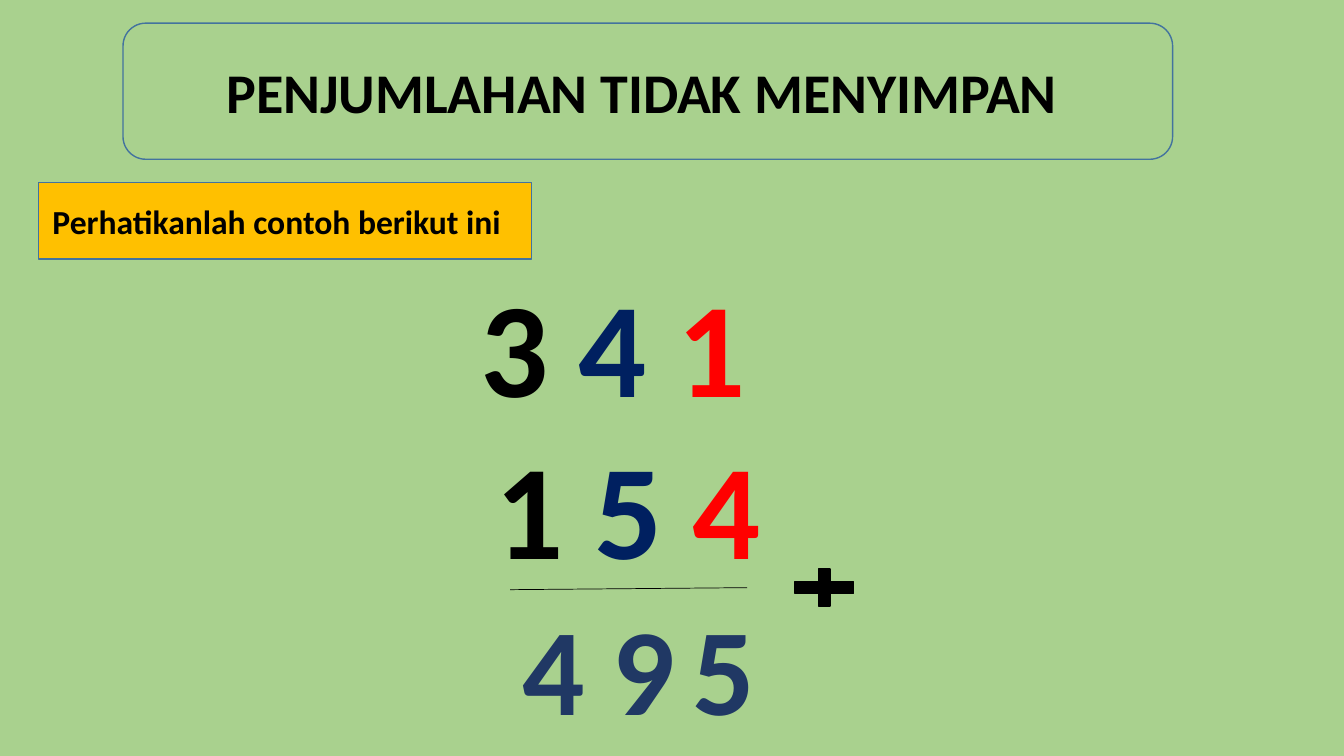
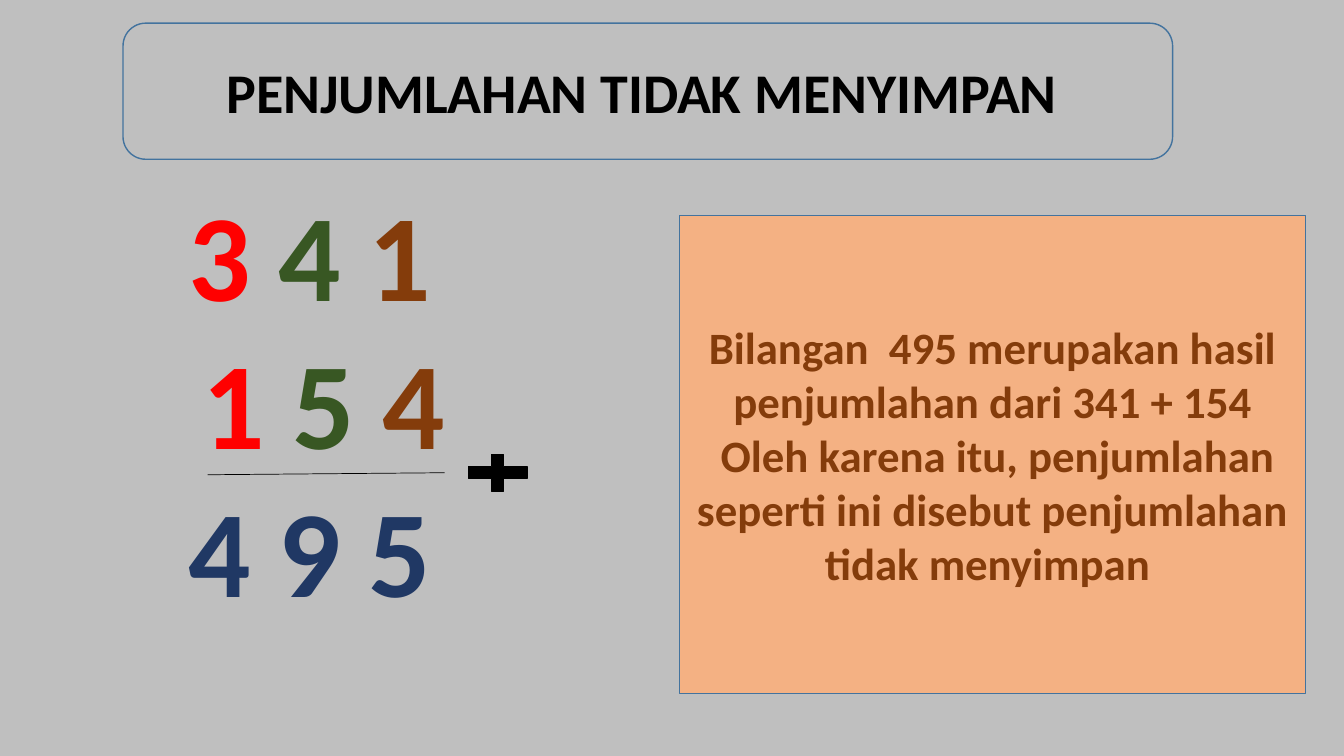
from pptx import Presentation
from pptx.dml.color import RGBColor
from pptx.enum.shapes import MSO_CONNECTOR as LINE, MSO_SHAPE as FORM
from pptx.enum.text import MSO_ANCHOR as ANCHOR, MSO_AUTO_SIZE as AUTO, PP_ALIGN as ALIGN
from pptx.oxml.ns import qn
from pptx.util import Inches, Pt
from lxml import etree

# Shared colours
BLACK, RED, NAVY = "000000", "FF0000", "002060"
BLUE, GREEN, BROWN = "203864", "385723", "843C0B"
EDGE = "43739E"


def draw(slide, form, place, fill=None, edge=None):
    """Add a preset shape without shadow, with optional fill and edge."""
    shape = slide.shapes.add_shape(form, *map(Inches, place))
    shape.shadow.inherit = False
    for part, code in ((shape.fill, fill), (shape.line.fill, edge)):
        if code:
            part.solid()
            part.fore_color.rgb = RGBColor.from_string(code)
        else:
            part.background()
    if edge:
        shape.line.width = Pt(1)
    return shape


def write(shape, rows, size):
    """Fill a shape with centred bold rows of (text, colour) runs."""
    frame = shape.text_frame
    frame.word_wrap = True
    frame.auto_size = AUTO.NONE
    frame.vertical_anchor = ANCHOR.MIDDLE
    for i, row in enumerate(rows):
        para = frame.paragraphs[0] if i == 0 else frame.add_paragraph()
        para.alignment = ALIGN.CENTER
        for text, code in row:
            run = para.add_run()
            run.text = text
            run.font.name = "Calibri"
            run.font.size = Pt(size)
            run.font.bold = True
            run.font.color.rgb = RGBColor.from_string(code)
    return frame


deck = Presentation()
deck.slide_width, deck.slide_height = Inches(13.33), Inches(7.5)

# Sums: digit rows, room left below them, place of the rule and plus sign
sums = [
    {"back": "A9D18E", "box": (-0.33, 2.56, 13.12, 4.94), "size": 96,
     "rows": [[("3 ", BLACK), ("4 ", NAVY), ("1 ", RED)],
              [("1 ", BLACK), ("5 ", NAVY), ("4", RED)]],
     "below": 1.68, "rule": (5.06, 5.85), "plus": (7.78, 5.58)},
    {"back": "BFBFBF", "box": (0.95, 0.79, 4.52, 6.36), "size": 88,
     "rows": [[("3 ", RED), ("4 ", GREEN), ("1 ", BROWN)],
              [("1 ", RED), ("5 ", GREEN), ("4", BROWN)],
              [("4 9 5 ", BLUE)]],
     "below": 0.05, "rule": (2.06, 4.71), "plus": (4.54, 4.44)},
]

# Both slides: background, framed title, sum
slides = []
for item in sums:
    slide = deck.slides.add_slide(deck.slide_layouts[5])
    slides.append(slide)
    slide.background.fill.solid()
    slide.background.fill.fore_color.rgb = RGBColor.from_string(item["back"])

    draw(slide, FORM.ROUNDED_RECTANGLE, (1.22, 0.23, 10.41, 1.35), edge=EDGE)
    title = slide.shapes.title
    title.left, title.top, title.width, title.height = map(
        Inches, (1.16, 0.23, 10.41, 1.35))
    write(title, [[("PENJUMLAHAN TIDAK MENYIMPAN", BLACK)]], 40)

    box = draw(slide, FORM.ROUNDED_RECTANGLE, item["box"])
    text = write(box, item["rows"], item["size"])
    text.margin_bottom = Inches(item["below"])

    x, y = item["rule"]
    rule = slide.shapes.add_connector(
        LINE.STRAIGHT, *map(Inches, (x, y, x + 2.35, y - 0.02)))
    rule.line.color.rgb = RGBColor.from_string(BLACK)
    rule.line.width = Pt(0.5)
    etree.SubElement(rule.element.spPr, qn("a:effectLst"))

    draw(slide, FORM.MATH_PLUS, (*item["plus"], 0.79, 0.5), BLACK, BLACK)

# Slide 1: answer digits
for digit, x, corner in (("5", 6.73, 0.17), ("9", 5.93, 0.17), ("4", 5.06, 0)):
    box = draw(slides[0], FORM.ROUNDED_RECTANGLE, (x, 5.94, 0.86, 1.33))
    box.adjustments[0] = corner
    write(box, [[(digit, BLUE)]], 88)

# Filled panels: the prompt on slide 1, the conclusion on slide 2
panels = [
    (slides[0], (0.38, 1.81, 4.89, 0.76), "FFC000", BLACK, 24, 0.26,
     ["Perhatikanlah contoh berikut ini"]),
    (slides[1], (6.74, 2.14, 6.21, 4.74), "F4B183", BROWN, 32, 0.1,
     ["Bilangan  495 merupakan hasil penjumlahan dari 341 + 154",
      " Oleh karena itu, penjumlahan seperti ini disebut "
      "penjumlahan tidak menyimpan "]),
]
for slide, place, fill, ink, size, inset, lines in panels:
    panel = draw(slide, FORM.RECTANGLE, place, fill, EDGE)
    text = write(panel, [[(line, ink)] for line in lines], size)
    text.margin_right = Inches(inset)

deck.save("out.pptx")
